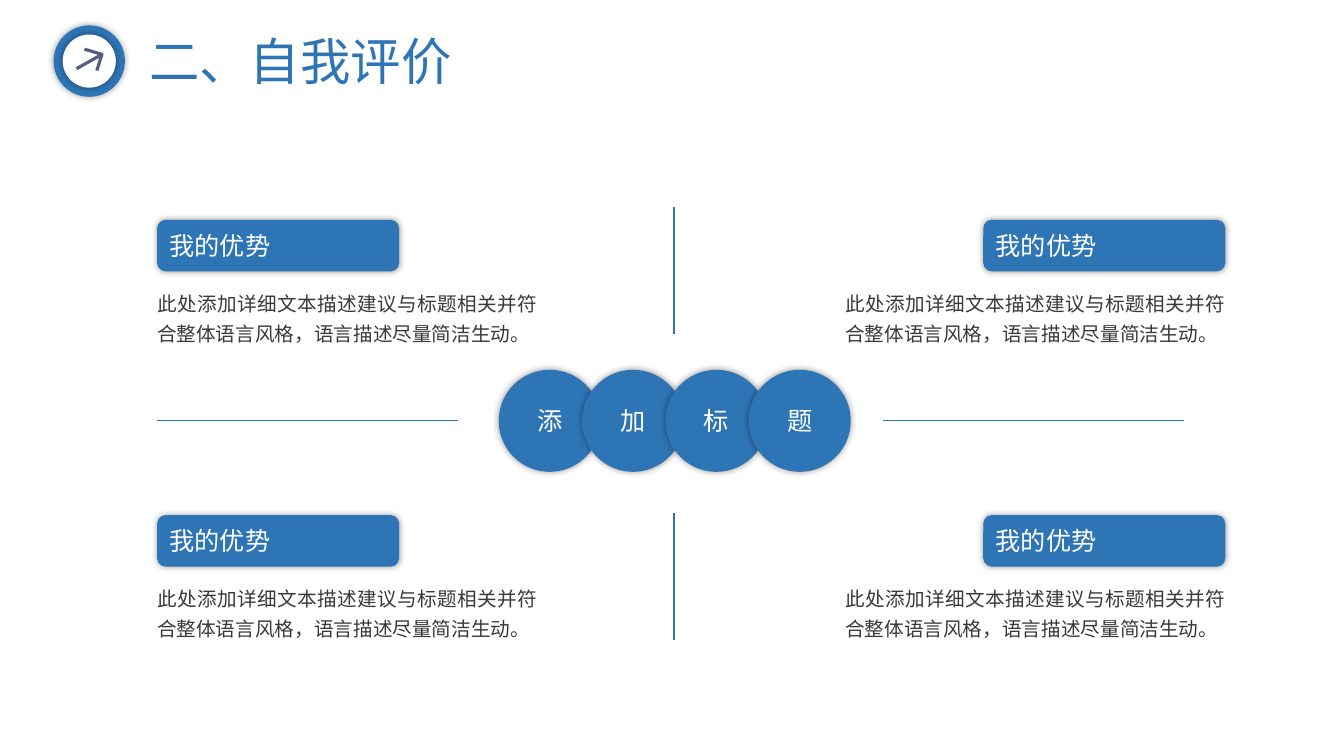
from lxml.etree import SubElement
from pptx import Presentation
from pptx.dml.color import RGBColor
from pptx.enum.shapes import MSO_CONNECTOR, MSO_SHAPE
from pptx.enum.text import MSO_ANCHOR, MSO_AUTO_SIZE, PP_ALIGN
from pptx.oxml.ns import qn
from pptx.util import Cm, Pt

COLORS = {"blue": "2E75B6", "white": "FFFFFF", "slate": "545D79", "body": "3B3838", "shadow": "000000"}
HEADING_FONT = "Noto Sans CJK JP"
BODY_FONT = "Noto Sans CJK SC"
CIRCLE_FONT = "Calibri"
DESCRIPTION = "此处添加详细文本描述建议与标题相关并符合整体语言风格，语言描述尽量简洁生动。"


def color(name):
    """Return the named colour."""
    return RGBColor.from_string(COLORS[name])


def add_glow_shape(shapes, kind, box, fill):
    """Add a borderless filled shape with a soft, centred shadow."""
    shape = shapes.add_shape(kind, *map(Cm, box))
    shape.fill.solid()
    shape.fill.fore_color.rgb = color(fill)
    shape.line.fill.background()
    shape.shadow.inherit = False
    effects = shape._element.spPr.find(qn("a:effectLst"))
    shadow = SubElement(effects, qn("a:outerShdw"), blurRad=str(Pt(5)), dist="0", dir="0", algn="ctr", rotWithShape="0")
    shade = SubElement(shadow, qn("a:srgbClr"), val=COLORS["shadow"])
    SubElement(shade, qn("a:alpha"), val="40000")
    return shape


def write(shape, text, size, font, ink, align=PP_ALIGN.LEFT):
    """Put one formatted paragraph into a shape and return the paragraph."""
    text_frame = shape.text_frame
    text_frame.word_wrap = True
    text_frame.text = text
    paragraph = text_frame.paragraphs[0]
    paragraph.alignment = align
    run = paragraph.runs[0]
    run.font.size = Pt(size)
    run.font.name = font
    run.font.color.rgb = color(ink)
    SubElement(run._r.get_or_add_rPr(), qn("a:ea"), typeface=font)
    return paragraph


def add_line(shapes, start, end, ink, width):
    """Add a straight line without a shadow."""
    line = shapes.add_connector(MSO_CONNECTOR.STRAIGHT, *map(Cm, (*start, *end)))
    line.line.color.rgb = color(ink)
    line.line.width = Pt(width)
    SubElement(line._element.spPr, qn("a:effectLst"))


def add_header(slide, left, top, size):
    """Add the round arrow badge and the slide title beside it."""
    shapes = slide.shapes.add_group_shape().shapes
    inset = 0.23
    for gap, fill in ((0, "blue"), (inset, "white")):
        add_glow_shape(shapes, MSO_SHAPE.OVAL, (left + gap, top + gap, size - 2 * gap, size - 2 * gap), fill)
    tip = (left + 1.22, top + 0.73)
    barbs = [(left + 0.78, top + 0.6), tip, (left + 1.09, top + 1.14)]
    points = [(Cm(x), Cm(y)) for x, y in barbs]
    builder = shapes.build_freeform(*points[0])
    builder.add_line_segments(points[1:], close=False)
    arrowhead = builder.convert_to_shape()
    arrowhead.fill.background()
    arrowhead.line.color.rgb = color("slate")
    arrowhead.line.width = Pt(2.25)
    arrowhead.shadow.inherit = False
    add_line(shapes, (left + 0.58, top + 1.09), tip, "slate", 2.25)
    title = slide.shapes.add_textbox(Cm(left + 2.16), Cm(top), Cm(14.43), Cm(1.78))
    write(title, "二、自我评价", 36, HEADING_FONT, "blue")
    title.text_frame.auto_size = MSO_AUTO_SIZE.SHAPE_TO_FIT_TEXT


def add_card(slide, left, top, width, label_on_right):
    """Add a label with its description below, the label on either side."""
    label_width = 6.1
    label_left = left + width - label_width if label_on_right else left
    label = add_glow_shape(slide.shapes, MSO_SHAPE.ROUNDED_RECTANGLE, (label_left, top, label_width, 1.3), "blue")
    label.text_frame.vertical_anchor = MSO_ANCHOR.MIDDLE
    write(label, "我的优势", 18, HEADING_FONT, "white")
    description = slide.shapes.add_textbox(Cm(left), Cm(top + 1.02), Cm(width), Cm(2.95))
    text_frame = description.text_frame
    text_frame.margin_left = text_frame.margin_right = 0
    text_frame.margin_top = text_frame.margin_bottom = Cm(0.61)
    paragraph = write(description, DESCRIPTION, 14, BODY_FONT, "body", PP_ALIGN.JUSTIFY)
    paragraph.line_spacing = 1.3
    paragraph.space_after = Pt(12)


def add_circles(slide, left, top, diameter):
    """Add the row of overlapping circles, one character in each."""
    shapes = slide.shapes.add_group_shape().shapes
    step = 2.1
    for index, character in enumerate("添加标题"):
        circle = add_glow_shape(shapes, MSO_SHAPE.OVAL, (left + index * step, top, diameter, diameter), "blue")
        circle.text_frame.vertical_anchor = MSO_ANCHOR.MIDDLE
        write(circle, character, 18, CIRCLE_FONT, "white", PP_ALIGN.CENTER)


def add_dividers(slide, left, top, width, height):
    """Add the four lines reaching inwards from the edges of the box."""
    shapes = slide.shapes.add_group_shape().shapes
    across, down = 7.58, 3.2
    center_x, center_y = left + 13.03, top + 5.38
    for x in (left, left + width - across):
        add_line(shapes, (x, center_y), (x + across, center_y), "blue", 1)
    for y in (top, top + height - down):
        add_line(shapes, (center_x, y), (center_x, y + down), "blue", 1)


def build_slide(presentation):
    """Add the self-evaluation slide."""
    slide = presentation.slides.add_slide(presentation.slide_layouts[6])
    add_header(slide, 1.35, 0.64, 1.8)
    add_circles(slide, 12.57, 9.32, 2.57)
    for top in (5.54, 12.98):
        for left, label_on_right in ((3.96, False), (21.3, True)):
            add_card(slide, left, top, 9.58, label_on_right)
    add_dividers(slide, 3.96, 5.21, 25.88, 10.92)


def main():
    """Build and save the presentation."""
    presentation = Presentation()
    presentation.slide_width = Cm(33.87)
    presentation.slide_height = Cm(19.05)
    build_slide(presentation)
    presentation.save("out.pptx")


if __name__ == "__main__":
    main()
